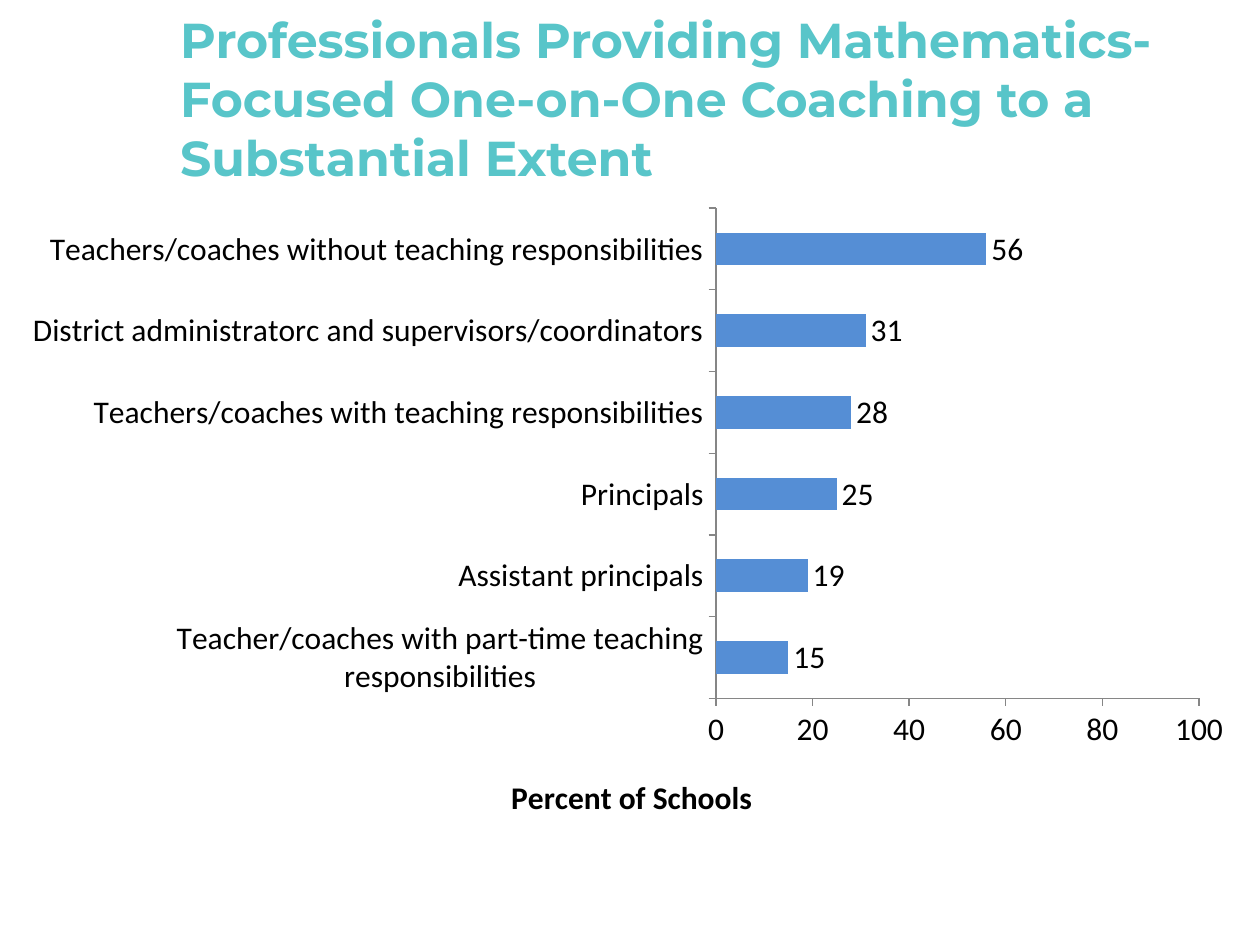
from pptx import Presentation
from pptx import util as u
from pptx.chart import data as cd
from pptx.dml import color
from pptx.enum import chart as ch, text
from pptx.oxml import parse_xml
from pptx.oxml import ns

THEME = {
    "title": {"name": "Montserrat", "size": 28, "bold": True, "color": "58C5C9"},
    "chart": {"name": "Calibri", "size": 18, "bold": False, "color": "000000"},
    "label": {"name": "Calibri", "size": 18, "bold": True, "color": "000000"},
    "bar": "558ED5",
    "axis": "868686",
}
SCHOOLS = {
    "Teacher/coaches with part-time teaching responsibilities": 15,
    "Assistant principals": 19,
    "Principals": 25,
    "Teachers/coaches with teaching responsibilities": 28,
    "District administratorc and supervisors/coordinators": 31,
    "Teachers/coaches without teaching responsibilities": 56,
}


def assign(item, values):
    for key, value in values.items():
        setattr(item, key, value)


def rgb(code):
    return color.RGBColor.from_string(code)


def style(font, look):
    assign(font, {"name": look["name"], "size": u.Pt(look["size"]), "bold": look["bold"]})
    font.color.rgb = rgb(look["color"])


def place(box, left, top, width, height):
    assign(box, {"left": u.Inches(left), "top": u.Inches(top),
                 "width": u.Inches(width), "height": u.Inches(height)})


def layout(parent, index, target="", **parts):
    for old in parent.findall(ns.qn("c:layout")):
        parent.remove(old)
    modes = "".join(f'<c:{key}Mode val="edge"/>' for key in "xy")
    sizes = "".join(f'<c:{key} val="{value}"/>' for key, value in parts.items())
    parent.insert(index, parse_xml(
        f'<c:layout {ns.nsdecls("c")}><c:manualLayout>'
        f'{target}{modes}{sizes}</c:manualLayout></c:layout>'))


def add_title(slide, words):
    title = slide.shapes.title
    place(title, 1.33, 0.3, 8.5, 0.95)
    frame = title.text_frame
    assign(frame, {"text": words, "word_wrap": True,
                   "auto_size": text.MSO_AUTO_SIZE.NONE,
                   "vertical_anchor": text.MSO_ANCHOR.MIDDLE})
    line = frame.paragraphs[0]
    line.alignment = text.PP_ALIGN.LEFT
    style(line.runs[0].font, THEME["title"])


def draw_axis(axis, values):
    assign(axis, {"has_major_gridlines": False,
                  "major_tick_mark": ch.XL_TICK_MARK.OUTSIDE,
                  "minor_tick_mark": ch.XL_TICK_MARK.NONE, **values})
    style(axis.tick_labels.font, THEME["chart"])
    axis.format.line.width = u.Pt(0.75)
    axis.format.line.color.rgb = rgb(THEME["axis"])


def name_axis(axis, words):
    title = axis.axis_title
    title.text_frame.text = words
    style(title.text_frame.paragraphs[0].runs[0].font, THEME["label"])
    layout(title.element, 1, x=0.4, y=0.89)


def add_bars(slide, values):
    data = cd.CategoryChartData(number_format="General")
    data.categories = list(values)
    data.add_series("Series 1", list(values.values()))
    spot = [u.Inches(n) for n in (0.08, 1.55, 9.83, 5.12)]
    chart = slide.shapes.add_chart(ch.XL_CHART_TYPE.BAR_CLUSTERED, *spot, data).chart
    assign(chart, {"has_legend": False, "has_title": False})
    style(chart.font, THEME["chart"])
    draw_axis(chart.category_axis, {})
    draw_axis(chart.value_axis, {"minimum_scale": 0, "maximum_scale": 100, "major_unit": 20})
    name_axis(chart.value_axis, "Percent of Schools")
    plot = chart.plots[0]
    assign(plot, {"gap_width": 150, "vary_by_categories": False, "has_data_labels": True})
    assign(plot.data_labels, {"show_value": True,
                              "position": ch.XL_LABEL_POSITION.OUTSIDE_END})
    style(plot.data_labels.font, THEME["chart"])
    fill = plot.series[0].format.fill
    fill.solid()
    fill.fore_color.rgb = rgb(THEME["bar"])
    area = chart.element.find(".//" + ns.qn("c:plotArea"))
    layout(area, 0, '<c:layoutTarget val="inner"/>', x=0.57, y=0.02, w=0.39, h=0.76)


def main():
    deck = Presentation()
    assign(deck, {"slide_width": u.Inches(10), "slide_height": u.Inches(7.5)})
    slide = deck.slides.add_slide(deck.slide_layouts[5])
    add_bars(slide, SCHOOLS)
    add_title(slide, "Professionals Providing Mathematics- Focused "
                     "One-on-One Coaching to a Substantial Extent")
    deck.save("out.pptx")


if __name__ == "__main__":
    main()
